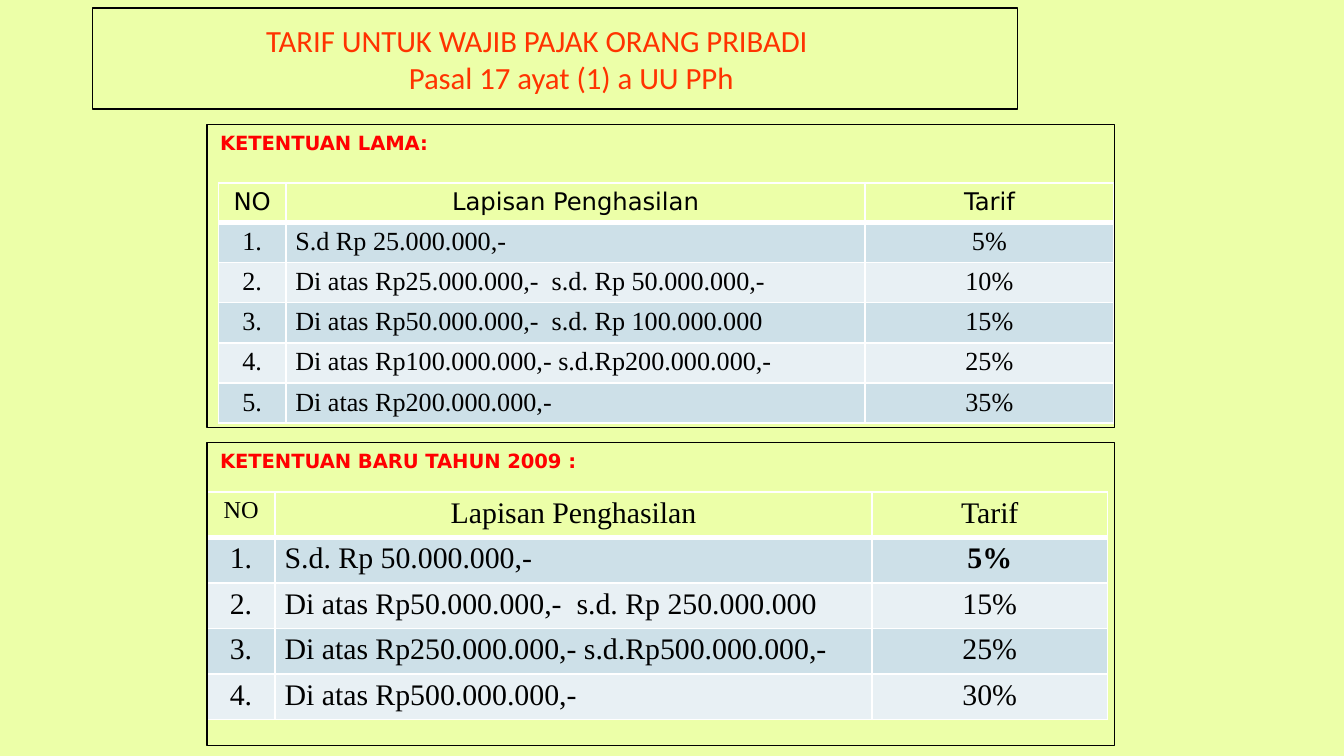
from dataclasses import dataclass

from lxml.etree import SubElement
from pptx import Presentation
from pptx.dml.color import RGBColor
from pptx.enum.shapes import MSO_SHAPE as Shape
from pptx.enum.text import MSO_ANCHOR as Anchor, MSO_AUTO_SIZE as AutoSize, PP_ALIGN as Align
from pptx.oxml.ns import qn
from pptx.util import Cm, Pt


@dataclass(frozen=True)
class Theme:
    background: str = "ECFFA8"
    black: str = "000000"
    title_color: str = "FF3300"
    label_color: str = "FF0000"
    border: str = "FFFFFF"
    bands: tuple = ("CDE0E8", "E8F0F4")
    title_font: str = "Calibri"
    sans: str = "DejaVu Sans"
    serif: str = "Times New Roman"
    title_size: float = 16.5
    label_size: float = 10.5
    small_size: float = 13
    old_size: float = 14
    new_size: float = 16


def write(paragraph, text, *, font, size, color, bold=False, align=Align.LEFT):
    paragraph.alignment = align
    run = paragraph.add_run()
    run.text = text
    run.font.name = font
    run.font.size = Pt(size)
    run.font.bold = bold
    run.font.color.rgb = RGBColor.from_string(color)


def border_cell(cell, color, widths):
    """Draw cell borders; widths maps L, R, T and B to points."""
    properties = cell._tc.get_or_add_tcPr()
    for side in "LRTB":
        line = SubElement(properties, qn(f"a:ln{side}"), w=str(Pt(widths[side])))
        fill = SubElement(line, qn("a:solidFill"))
        SubElement(fill, qn("a:srgbClr"), val=color)


class SlideBuilder:
    def __init__(self, slide, theme):
        self.slide = slide
        self.theme = theme
        background = slide.background.fill
        background.solid()
        background.fore_color.rgb = RGBColor.from_string(theme.background)

    def outline(self, shape):
        shape.line.color.rgb = RGBColor.from_string(self.theme.black)
        shape.line.width = Pt(0.75)

    def title(self, lines, left, top, width, height, second_indent):
        theme = self.theme
        title = self.slide.shapes.title
        title.left, title.top, title.width, title.height = map(Cm, (left, top, width, height))
        self.outline(title)
        frame = title.text_frame
        frame.auto_size = AutoSize.NONE
        frame.vertical_anchor = Anchor.MIDDLE
        frame.margin_left = frame.margin_top = frame.margin_bottom = Cm(0.25)
        frame.margin_right = Cm(0.94)
        for index, text in enumerate(lines):
            paragraph = frame.add_paragraph() if index else frame.paragraphs[0]
            write(paragraph, text, font=theme.title_font, size=theme.title_size,
                  color=theme.title_color, align=Align.CENTER)
            paragraph._p.get_or_add_pPr().set("marL", str(Cm(second_indent * index)))

    def panel(self, label, left, top, width, height):
        theme = self.theme
        panel = self.slide.shapes.add_shape(Shape.RECTANGLE, *map(Cm, (left, top, width, height)))
        panel.shadow.inherit = False
        panel.fill.background()
        self.outline(panel)
        frame = panel.text_frame
        frame.word_wrap = True
        frame.vertical_anchor = Anchor.TOP
        write(frame.paragraphs[0], label, font=theme.sans, size=theme.label_size,
              color=theme.label_color, bold=True)

    def rate_table(self, rates, left, top, columns, header_height, row_height,
                   header_font, header_sizes, body_size, bold_cells=()):
        """Draw a numbered table of (income bracket, rate) rows."""
        theme = self.theme
        rows = [("NO", "Lapisan Penghasilan", "Tarif")]
        rows += [(f"{number}.", *rate) for number, rate in enumerate(rates, 1)]
        heights = [header_height] + [row_height] * len(rates)
        table = self.slide.shapes.add_table(
            len(rows), len(columns), Cm(left), Cm(top), Cm(sum(columns)), Cm(sum(heights))).table
        for column, width in zip(table.columns, columns):
            column.width = Cm(width)
        for row, values in enumerate(rows):
            table.rows[row].height = Cm(heights[row])
            is_header = row == 0
            color = theme.background if is_header else theme.bands[(row - 1) % 2]
            widths = {"L": 1, "R": 1, "T": 3 if row == 1 else 1, "B": 3 if is_header else 1}
            for column, text in enumerate(values):
                cell = table.cell(row, column)
                border_cell(cell, theme.border, widths)
                cell.fill.solid()
                cell.fill.fore_color.rgb = RGBColor.from_string(color)
                cell.margin_left = cell.margin_right = Cm(0.18)
                cell.margin_top = cell.margin_bottom = Cm(0.09)
                is_bracket = column == 1 and not is_header
                write(cell.text_frame.paragraphs[0], text,
                      font=header_font if is_header else theme.serif,
                      size=header_sizes[column] if is_header else body_size,
                      color=theme.black, bold=(row, column) in bold_cells,
                      align=Align.LEFT if is_bracket else Align.CENTER)


OLD_RATES = [
    ("S.d Rp 25.000.000,-", "5%"),
    ("Di atas Rp25.000.000,-  s.d. Rp 50.000.000,-", "10%"),
    ("Di atas Rp50.000.000,-  s.d. Rp 100.000.000", "15%"),
    ("Di atas Rp100.000.000,- s.d.Rp200.000.000,-", "25%"),
    ("Di atas Rp200.000.000,-", "35%"),
]
NEW_RATES = [
    ("S.d. Rp 50.000.000,-", "5%"),
    ("Di atas Rp50.000.000,-  s.d. Rp 250.000.000", "15%"),
    ("Di atas Rp250.000.000,- s.d.Rp500.000.000,-", "25%"),
    ("Di atas Rp500.000.000,-", "30%"),
]


def main():
    theme = Theme()
    presentation = Presentation()
    presentation.slide_width, presentation.slide_height = Cm(25.4), Cm(14.29)
    title_only = presentation.slide_layouts[5]
    builder = SlideBuilder(presentation.slides.add_slide(title_only), theme)

    builder.title(["TARIF UNTUK WAJIB PAJAK ORANG PRIBADI", "Pasal 17 ayat (1) a UU PPh"],
                  1.75, 0.15, 17.48, 1.91, second_indent=1.3)
    builder.rate_table(OLD_RATES, 4.13, 3.46, (1.27, 10.95, 4.7), 0.74, 0.76,
                       theme.sans, [theme.small_size] * 3, theme.old_size)
    builder.rate_table(NEW_RATES, 3.91, 9.3, (1.29, 11.28, 4.45), 0.86, 0.86,
                       theme.serif, [theme.small_size, theme.new_size, theme.new_size],
                       theme.new_size, bold_cells={(1, 2)})
    for label, top in (("KETENTUAN LAMA:", 2.36), ("KETENTUAN BARU TAHUN 2009 :", 8.37)):
        builder.panel(label, 3.91, top, 17.15, 5.72)

    presentation.save("out.pptx")


if __name__ == "__main__":
    main()
